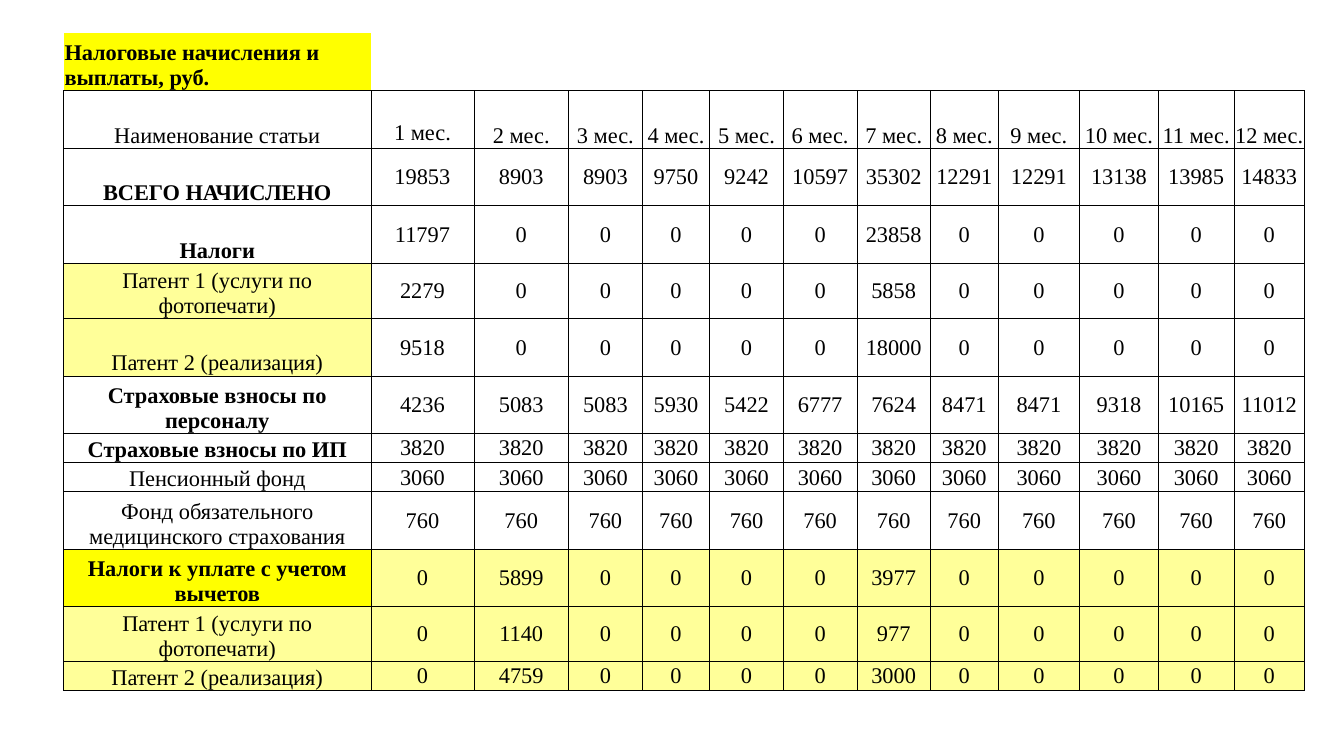
from lxml.etree import SubElement
from pptx import Presentation
from pptx.dml.color import RGBColor
from pptx.enum.text import MSO_ANCHOR as Anchor, PP_ALIGN as Align
from pptx.oxml.ns import qn
from pptx.util import Inches, Pt

FONT = "Times New Roman"
BLACK, BRIGHT, PALE = "000000", "FFFF00", "FFFF99"
NO_STYLE = "{2D5ABB26-0587-4C30-8999-92F81FD0307C}"
TITLE = "Налоговые начисления и выплаты, руб."
COLUMN_WIDTHS = [3.05, 1.02, 0.94, 0.73, 0.67, 0.73, 0.73, 0.73, 0.67,
                 0.81, 0.78, 0.75, 0.7]
TITLE_HEIGHT = HEADER_HEIGHT = 0.57
MONTHS = 12


def halves(first, seventh):
    """Twelve months with payments only in one early month and month 7."""
    month, amount = first
    values = [0] * MONTHS
    values[month - 1], values[6] = amount, seventh
    return values


# label, bold, label fill, values fill, row height, monthly values
ARTICLES = [
    ("ВСЕГО НАЧИСЛЕНО", True, None, None, 0.57,
     [19853, 8903, 8903, 9750, 9242, 10597, 35302, 12291, 12291, 13138, 13985, 14833]),
    ("Налоги", True, None, None, 0.57, halves((1, 11797), 23858)),
    ("Патент 1 (услуги по фотопечати)", False, PALE, None, 0.55, halves((1, 2279), 5858)),
    ("Патент 2 (реализация)", False, PALE, None, 0.57, halves((1, 9518), 18000)),
    ("Страховые взносы по персоналу", True, None, None, 0.57,
     [4236, 5083, 5083, 5930, 5422, 6777, 7624, 8471, 8471, 9318, 10165, 11012]),
    ("Страховые взносы по ИП", True, None, None, 0.29, [3820] * MONTHS),
    ("Пенсионный фонд", False, None, None, 0.29, [3060] * MONTHS),
    ("Фонд обязательного медицинского страхования", False, None, None, 0.57,
     [760] * MONTHS),
    ("Налоги к уплате с учетом вычетов", True, BRIGHT, PALE, 0.57,
     halves((2, 5899), 3977)),
    ("Патент 1 (услуги по фотопечати)", False, PALE, PALE, 0.54, halves((2, 1140), 977)),
    ("Патент 2 (реализация)", False, PALE, PALE, 0.29, halves((2, 4759), 3000)),
]


def color(hex_string):
    return RGBColor.from_string(hex_string)


def set_borders(cell, sides):
    """Draw thin black lines on the sides named by letters from LRTB."""
    properties = cell._tc.get_or_add_tcPr()
    for side in sides:
        line = SubElement(properties, qn(f"a:ln{side}"), w=str(Pt(0.5)))
        fill = SubElement(line, qn("a:solidFill"))
        SubElement(fill, qn("a:srgbClr"), val=BLACK)


def set_fill(cell, fill):
    if fill:
        cell.fill.solid()
        cell.fill.fore_color.rgb = color(fill)
    else:
        cell.fill.background()


def write(cell, text, bold=False, align=Align.CENTER, anchor=Anchor.MIDDLE, bottom=0):
    cell.margin_left = cell.margin_right = cell.margin_top = Inches(0.01)
    cell.margin_bottom = Inches(bottom)
    cell.vertical_anchor = anchor
    para = cell.text_frame.paragraphs[0]
    para.alignment = align
    span = para.add_run()
    span.text = text
    span.font.name, span.font.size, span.font.bold = FONT, Pt(16), bold
    span.font.color.rgb = color(BLACK)


def add_tax_table(page):
    heights = [TITLE_HEIGHT, HEADER_HEIGHT] + [article[4] for article in ARTICLES]
    frame = page.shapes.add_table(
        len(heights), len(COLUMN_WIDTHS), Inches(0.63), Inches(0.33),
        Inches(sum(COLUMN_WIDTHS)), Inches(sum(heights)))
    table = frame.table
    table.first_row = table.horz_banding = False
    table._tbl.tblPr.find(qn("a:tableStyleId")).text = NO_STYLE
    for column, width in zip(table.columns, COLUMN_WIDTHS):
        column.width = Inches(width)
    for row, height in zip(table.rows, heights):
        row.height = Inches(height)
    return table


def fill_title(cells):
    for cell in cells:
        set_borders(cell, "B")
        set_fill(cell, None)
    set_fill(cells[0], BRIGHT)
    write(cells[0], TITLE, bold=True, align=Align.LEFT, anchor=Anchor.BOTTOM)


def fill_header(cells):
    labels = ["Наименование статьи"] + [f"{month} мес." for month in range(1, MONTHS + 1)]
    for index, (cell, label) in enumerate(zip(cells, labels)):
        set_borders(cell, "LRTB")
        set_fill(cell, None)
        write(cell, label, anchor=Anchor.BOTTOM, bottom=0.03 if index == 1 else 0)


def fill_article(cells, label, bold, label_fill, values_fill, values):
    for cell in cells:
        set_borders(cell, "LRTB")
    set_fill(cells[0], label_fill)
    write(cells[0], label, bold=bold, anchor=Anchor.BOTTOM)
    for cell, value in zip(cells[1:], values):
        set_fill(cell, values_fill)
        write(cell, str(value))


def main():
    deck = Presentation()
    deck.slide_width, deck.slide_height = Inches(13.33), Inches(7.5)
    page = deck.slides.add_slide(deck.slide_layouts[6])
    table = add_tax_table(page)
    title, header, *rows = [list(row.cells) for row in table.rows]
    fill_title(title)
    fill_header(header)
    for cells, (label, bold, label_fill, values_fill, _, values) in zip(rows, ARTICLES):
        fill_article(cells, label, bold, label_fill, values_fill, values)
    deck.save("out.pptx")


if __name__ == "__main__":
    main()
